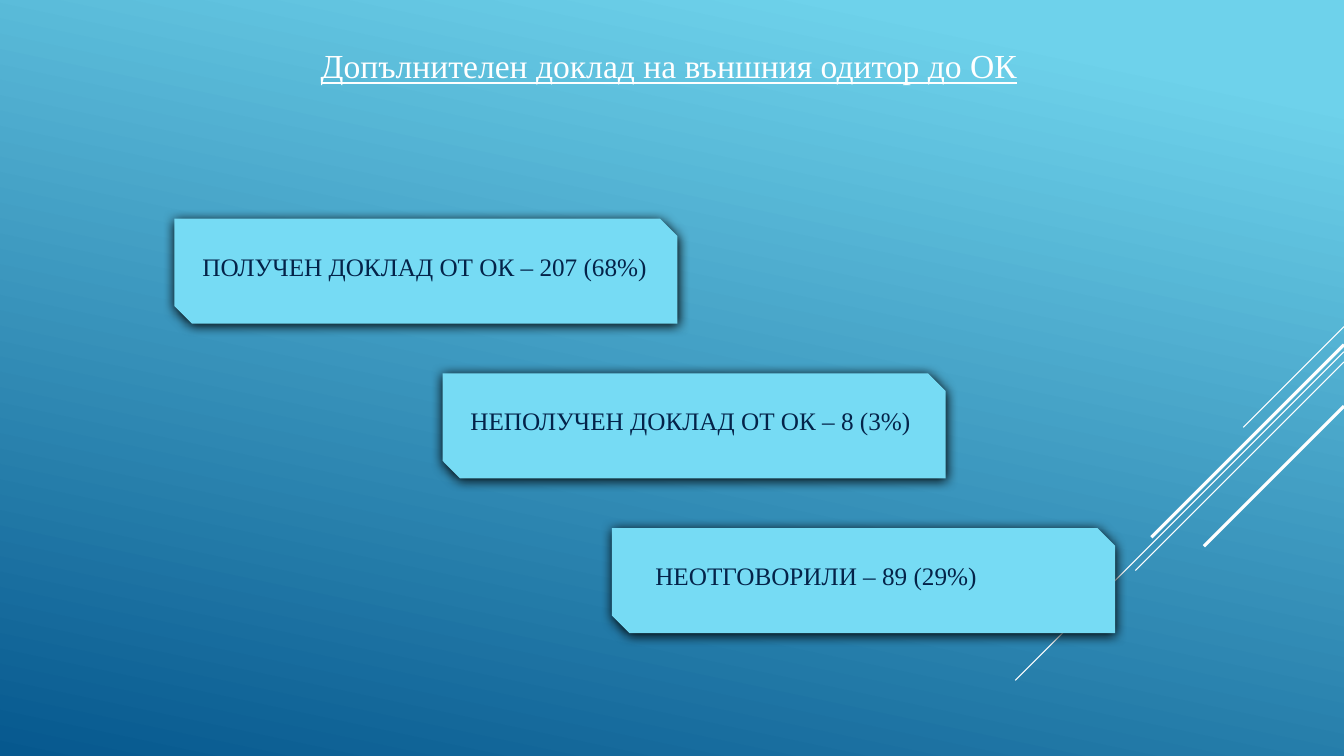
from lxml.etree import SubElement
from pptx import Presentation
from pptx.dml.color import RGBColor
from pptx.enum.shapes import MSO_CONNECTOR, MSO_SHAPE
from pptx.enum.text import MSO_ANCHOR, MSO_AUTO_SIZE, PP_ALIGN
from pptx.oxml.ns import qn
from pptx.util import Inches, Pt

W, H = Inches(13.333), Inches(7.5)
FONT = "Times New Roman"
COLORS = {
    "sky": "6ED2EB",
    "deep": "06588E",
    "card": "76DBF4",
    "ink": "042349",
    "white": "FFFFFF",
    "shadow": "000000",
}
CARD_TOP, CARD_STEP, CARD_W, CARD_H = 28.93, 20.47, 37.43, 13.87
CARDS = [
    ("ПОЛУЧЕН ДОКЛАД ОТ ОК – 207 (68%)", 12.98, 1.33),
    ("НЕПОЛУЧЕН ДОКЛАД ОТ ОК – 8 (3%)", 32.93, 1.33),
    ("НЕОТГОВОРИЛИ – 89 (29%)", 45.54, 2.48),
]
RAYS = [
    (43.2, 13.33, 0.75),
    (46.53, 43.47, 0.75),
    (47.87, 27.6, 0.75),
    (45.6, 25.47, 2.25),
    (53.73, 18.53, 2.25),
]


def rgb(name):
    """Return a palette colour."""
    return RGBColor.from_string(COLORS[name])


def box(x, y, w, h):
    """Turn percentages of the slide into left, top, width and height."""
    return [int(W * x / 100), int(H * y / 100), int(W * w / 100), int(H * h / 100)]


def place(sp, x, y, w, h):
    """Move a shape to a box given in percentages of the slide."""
    sp.left, sp.top, sp.width, sp.height = box(x, y, w, h)


def paint_background(s):
    """Fill the slide with the slanted blue gradient."""
    fill = s.background.fill
    fill.gradient()
    fill.gradient_angle = 258
    for stop, (pos, name) in zip(fill.gradient_stops, [(0.1, "sky"), (1, "deep")]):
        stop.position = pos
        stop.color.rgb = rgb(name)


def add_ray(s, top, drop, width):
    """Draw a diagonal line running down and left from the right edge."""
    y, run = int(H * top / 100), int(H * drop / 100)
    ln = s.shapes.add_connector(MSO_CONNECTOR.STRAIGHT, W, y, W - run, y + run)
    ln.line.color.rgb = rgb("white")
    ln.line.width = Pt(width)
    SubElement(ln._element.spPr, qn("a:effectLst"))


def add_card(s, x, y):
    """Draw a card with snipped corners and a soft shadow."""
    sp = s.shapes.add_shape(MSO_SHAPE.SNIP_2_DIAG_RECTANGLE, *box(x, y, CARD_W, CARD_H))
    sp.fill.solid()
    sp.fill.fore_color.rgb = rgb("card")
    sp.line.fill.background()
    sp.shadow.inherit = False
    effects = sp._element.spPr.find(qn("a:effectLst"))
    shadow = SubElement(effects, qn("a:outerShdw"), blurRad=str(Pt(8.5)),
                        dist=str(Pt(1)), dir="5400000", rotWithShape="0")
    SubElement(shadow, qn("a:srgbClr"), val=COLORS["shadow"])


def write(sp, text, size, color, anchor, underline=None):
    """Write one left-aligned paragraph into a shape and return it."""
    tf = sp.text_frame
    tf.word_wrap = True
    tf.auto_size = MSO_AUTO_SIZE.NONE
    tf.vertical_anchor = anchor
    p = tf.paragraphs[0]
    p.alignment = PP_ALIGN.LEFT
    p.space_before = Pt(0)
    r = p.add_run()
    r.text = text
    r.font.name = FONT
    r.font.size = Pt(size)
    r.font.color.rgb = rgb(color)
    r.font.underline = underline
    return p


def add_heading(s):
    """Put the underlined heading into the body placeholder."""
    sp = s.placeholders[1]
    place(sp, 23.11, 5.33, 59.34, 6.67)
    p = write(sp, "Допълнителен доклад на външния одитор до ОК", 24, "white",
              MSO_ANCHOR.TOP, True)
    p.space_after = Pt(6)
    pPr = p._p.get_or_add_pPr()
    pPr.set("marL", "0")
    pPr.set("indent", "0")
    SubElement(pPr, qn("a:buNone"))


def main():
    """Build and save the slide."""
    prs = Presentation()
    prs.slide_width, prs.slide_height = W, H
    s = prs.slides.add_slide(prs.slide_layouts[1])
    paint_background(s)
    for ray in RAYS:
        add_ray(s, *ray)
    for i, (text, x, inset) in enumerate(CARDS):
        y = CARD_TOP + i * CARD_STEP
        add_card(s, x, y)
        label = (x + inset, y - 1.33, 39.6, 15.2)
        if i == 0:
            sp = s.shapes.title
            place(sp, *label)
            s.shapes._spTree.append(sp._element)
        else:
            sp = s.shapes.add_textbox(*box(*label))
        write(sp, text, 18, "ink", MSO_ANCHOR.MIDDLE)
    add_heading(s)
    prs.save("out.pptx")


if __name__ == "__main__":
    main()
